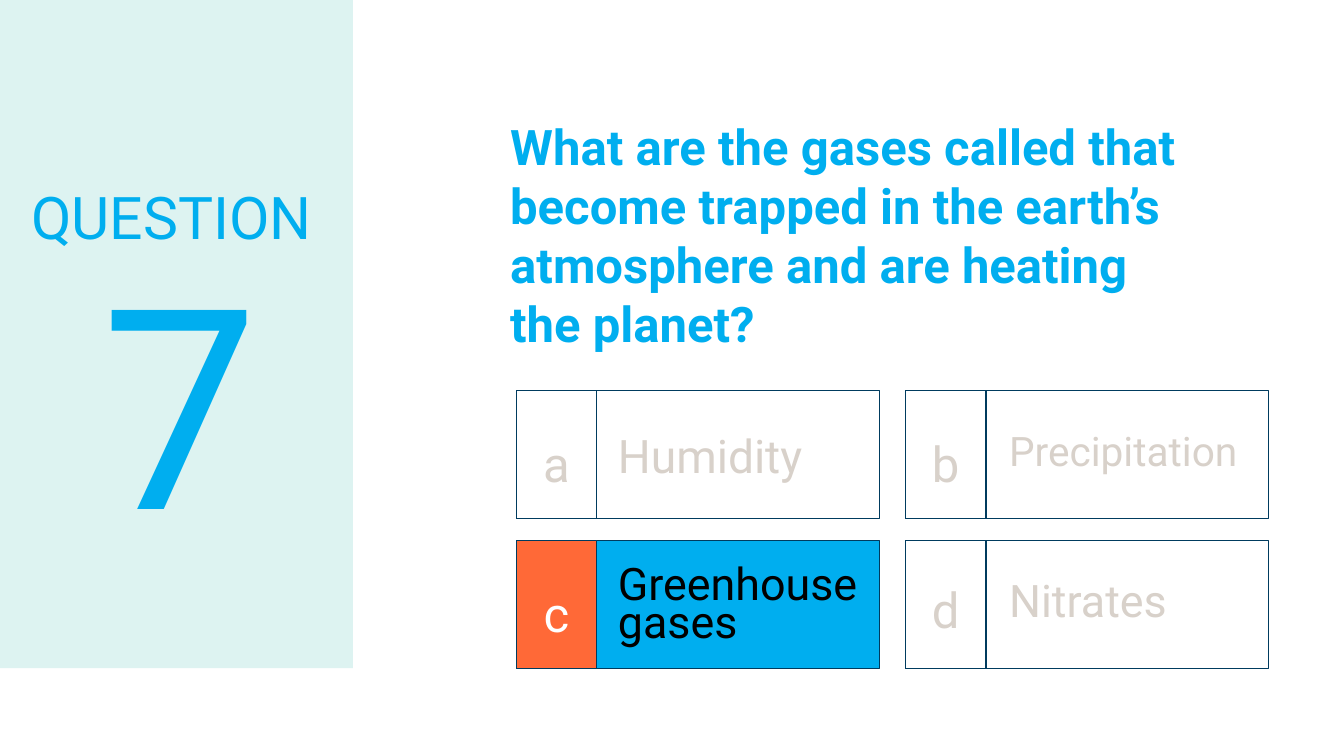
"""Build a quiz slide with one question and four answer boxes."""
from dataclasses import dataclass

import pptx
import pptx.dml.color
import pptx.enum.shapes
import pptx.enum.text
import pptx.shapes.autoshape
import pptx.slide
import pptx.text.text
import pptx.util

RGBColor = pptx.dml.color.RGBColor
Align = pptx.enum.text.PP_ALIGN
Anchor = pptx.enum.text.MSO_ANCHOR
Fit = pptx.enum.text.MSO_AUTO_SIZE

NAVY = RGBColor(0x00, 0x3B, 0x5E)
BLUE = RGBColor(0x00, 0xAE, 0xEF)
CORAL = RGBColor(0xFF, 0x69, 0x37)
MINT = RGBColor(0xDD, 0xF3, 0xF1)
GREY = RGBColor(0xD8, 0xD1, 0xCA)
BLACK = RGBColor(0x00, 0x00, 0x00)
WHITE = RGBColor(0xFF, 0xFF, 0xFF)

SCALE = 9144
LEFT, TOP = 512, 387
STEP_X, STEP_Y = 386, 149
BOX_W, BOX_H, KEY_W = 360, 127, 80


@dataclass(frozen=True)
class Box:
    left: int
    top: int
    width: int
    height: int


@dataclass(frozen=True)
class Style:
    size: int
    color: RGBColor
    align: Align = Align.LEFT
    space: float = 1.0
    bold: bool = False
    inset: int = 10
    anchor: Anchor = Anchor.TOP
    fit: Fit = Fit.SHAPE_TO_FIT_TEXT


@dataclass(frozen=True)
class Answer:
    key: str
    word: str
    col: int
    row: int
    size: int
    word_box: Box
    key_drop: int = 24
    right: bool = False


ANSWERS = [
    Answer("a", "Humidity", 0, 0, 33, Box(603, 429, 261, 59)),
    Answer("b", "Precipitation", 1, 0, 29, Box(991, 426, 261, 54)),
    Answer("c", "Greenhouse gases", 0, 1, 32, Box(603, 556, 282, 96), right=True),
    Answer("d", "Nitrates", 1, 1, 32, Box(991, 573, 261, 58), key_drop=20),
]


def px(count: int) -> pptx.util.Emu:
    """Turn px into EMU."""
    return pptx.util.Emu(count * SCALE)


def place(shape: pptx.shapes.autoshape.Shape, box: Box) -> None:
    """Move and size a shape."""
    shape.left, shape.top = px(box.left), px(box.top)
    shape.width, shape.height = px(box.width), px(box.height)


def write(frame: pptx.text.text.TextFrame, text: str, style: Style) -> None:
    """Add one styled run to a text frame."""
    frame.word_wrap = True
    frame.auto_size = style.fit
    frame.vertical_anchor = style.anchor
    frame.margin_left = frame.margin_right = px(style.inset)
    frame.margin_top = frame.margin_bottom = px(style.inset)
    para = frame.paragraphs[0]
    para.alignment = style.align
    para.line_spacing = style.space
    para.space_before = pptx.util.Pt(0)
    run = para.add_run()
    run.text = text
    run.font.name = "Roboto"
    run.font.size = pptx.util.Pt(style.size)
    run.font.bold = style.bold
    run.font.color.rgb = style.color


def add_text(slide: pptx.slide.Slide, box: Box, text: str, style: Style) -> None:
    """Add a text box."""
    shape = slide.shapes.add_textbox(0, 0, 0, 0)
    write(shape.text_frame, text, style)
    place(shape, box)


def add_rect(slide: pptx.slide.Slide, box: Box, fill: RGBColor | None,
             line: RGBColor | None) -> pptx.shapes.autoshape.Shape:
    """Add a rectangle with an optional fill and line."""
    kind = pptx.enum.shapes.MSO_SHAPE.RECTANGLE
    shape = slide.shapes.add_shape(kind, 0, 0, 0, 0)
    place(shape, box)
    shape.shadow.inherit = False
    if fill is None:
        shape.fill.background()
    else:
        shape.fill.solid()
        shape.fill.fore_color.rgb = fill
    if line is None:
        shape.line.fill.background()
    else:
        shape.line.color.rgb = line
        shape.line.width = pptx.util.Pt(0.75)
    return shape


def add_answer(slide: pptx.slide.Slide, answer: Answer) -> None:
    """Add an answer box with its letter and word."""
    left = LEFT + answer.col * STEP_X
    top = TOP + answer.row * STEP_Y
    fill, key_fill = (BLUE, CORAL) if answer.right else (None, None)
    color, key_color = (BLACK, WHITE) if answer.right else (GREY, GREY)
    add_rect(slide, Box(left, top, BOX_W, BOX_H), fill, NAVY)
    add_rect(slide, Box(left, top, KEY_W, BOX_H), key_fill, NAVY)
    add_text(slide, Box(left, top + answer.key_drop, KEY_W, 79), answer.key,
             Style(35, key_color, Align.CENTER, 1.15))
    add_text(slide, answer.word_box, answer.word,
             Style(answer.size, color, space=0.7))


def main() -> None:
    """Build and save the slide."""
    deck = pptx.Presentation()
    deck.slide_width, deck.slide_height = px(1333), px(750)
    slide = deck.slides.add_slide(deck.slide_layouts.get_by_name("Section Header"))

    title, body = slide.shapes.title, slide.placeholders[1]
    panel = add_rect(slide, Box(0, 0, 350, 663), MINT, None)
    title.element.addprevious(panel.element)
    place(title, Box(26, 168, 334, 101))
    write(title.text_frame, "QUESTION",
          Style(42, BLUE, space=0.9, inset=5, anchor=Anchor.MIDDLE, fit=Fit.NONE))
    add_text(slide, Box(26, 259, 305, 312), "7",
             Style(200, BLUE, Align.CENTER, 0.9, inset=5,
                   anchor=Anchor.MIDDLE, fit=Fit.NONE))
    place(body, Box(498, 108, 693, 237))
    write(body.text_frame,
          "What are the gases called that become trapped in the earth’s "
          "atmosphere and are heating the planet?",
          Style(35, BLUE, bold=True, inset=8, fit=Fit.NONE))

    for answer in ANSWERS:
        add_answer(slide, answer)
    deck.save("out.pptx")


if __name__ == "__main__":
    main()
